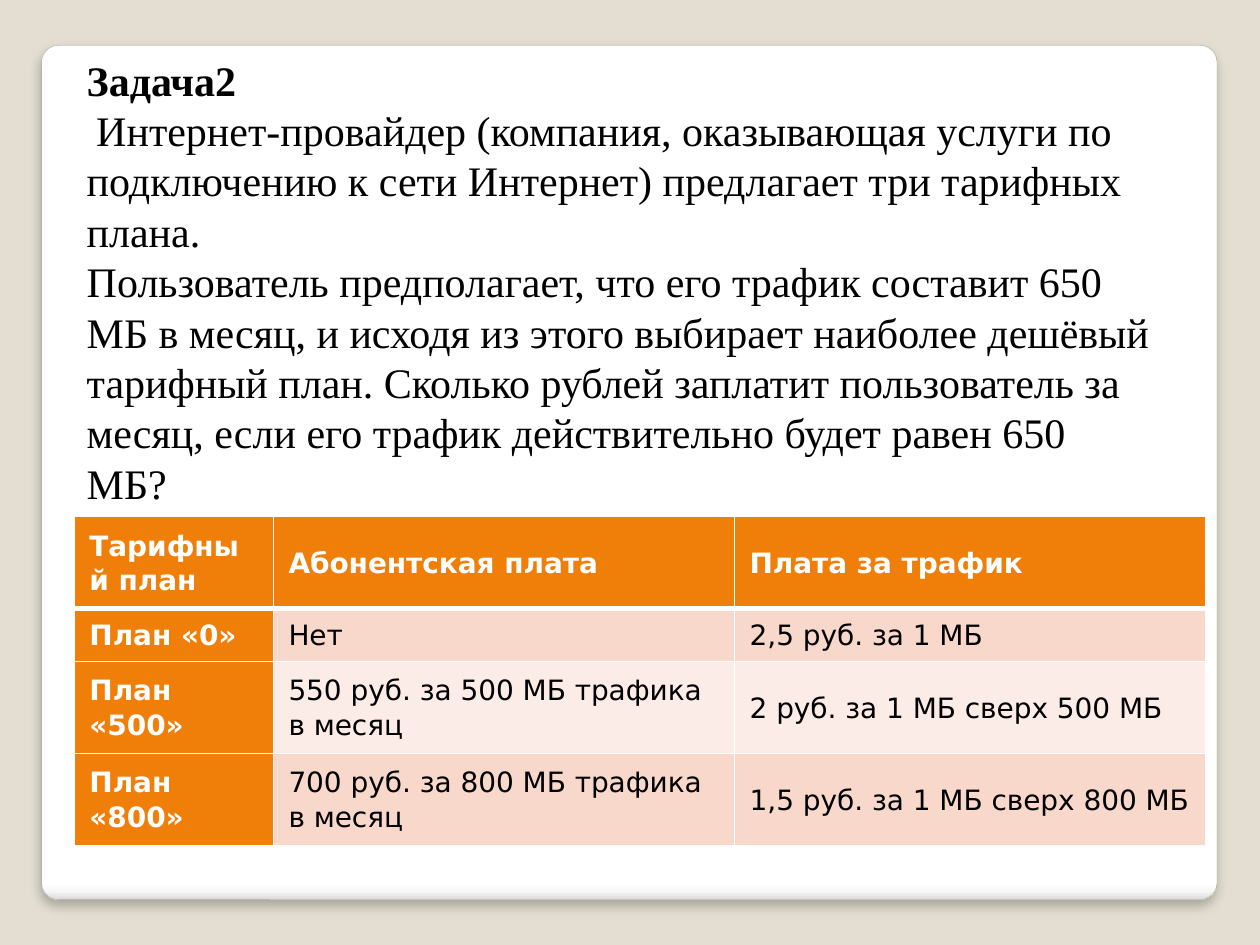
from lxml import etree
from pptx import Presentation
from pptx.dml.color import RGBColor
from pptx.enum.shapes import MSO_SHAPE
from pptx.enum.text import MSO_ANCHOR as ANCHOR, MSO_AUTO_SIZE as AUTO_SIZE
from pptx.oxml import parse_xml
from pptx.oxml.ns import nsdecls, qn
from pptx.util import Inches, Pt

COLORS = {
    "background": "E3DED1",
    "white": "FFFFFF",
    "black": "000000",
    "panel_line": "A4A4A4",
    "accent": "F07F09",
    "band_dark": "F9D8CC",
    "band_light": "FCECE7",
}
PANEL_STOPS = [(0, "FFFFFF"), (98, "FFFFFF"), (99, "F7F7F7"), (100, "DADADA")]
SERIF, SANS, BODY = "Times New Roman", "DejaVu Sans", "Calibri"

# Each paragraph is a list of (text, font, bold) runs
PROBLEM = [
    [("Задача2", SERIF, True)],
    [(" ", BODY, False),
     ("Интернет-провайдер (компания, оказывающая услуги по подключению к сети "
      "Интернет) предлагает три тарифных плана.", SERIF, False)],
    [("Пользователь предполагает, что его трафик составит 650 МБ в месяц, и исходя "
      "из этого выбирает наиболее дешёвый тарифный план. Сколько рублей заплатит "
      "пользователь за месяц, если его трафик действительно будет равен 650 МБ?",
      SERIF, False)],
]
TARIFFS = [
    ["Тарифный план", "Абонентская плата", "Плата за трафик"],
    ["План «0»", "Нет", "2,5 руб. за 1 МБ"],
    ["План «500»", "550 руб. за 500 МБ трафика в месяц",
     "2 руб. за 1 МБ сверх 500 МБ"],
    ["План «800»", "700 руб. за 800 МБ трафика в месяц",
     "1,5 руб. за 1 МБ сверх 800 МБ"],
]
COLUMN_WIDTHS = [1.58, 3.66, 3.74]
ROW_HEIGHTS = [0.73, 0.42, 0.73, 0.73]


def rgb(name):
    return RGBColor.from_string(COLORS[name])


def add_run(paragraph, text, font, size, color, bold):
    run = paragraph.add_run()
    run.text = text
    run.font.name = font
    run.font.size = Pt(size)
    run.font.bold = bold
    run.font.color.rgb = rgb(color)


def add_panel(slide):
    panel = slide.shapes.add_shape(
        MSO_SHAPE.ROUNDED_RECTANGLE,
        Inches(0.33), Inches(0.36), Inches(9.33), Inches(6.78))
    panel.adjustments[0] = 0.02
    panel.line.color.rgb = rgb("panel_line")
    panel.line.width = Pt(0.16)

    # Vertical gradient that darkens at the bottom edge
    panel.fill.gradient()
    panel.fill.gradient_angle = 270
    stops = panel.element.spPr.find(qn("a:gradFill")).find(qn("a:gsLst"))
    for stop in list(stops):
        stops.remove(stop)
    for position, color in PANEL_STOPS:
        stop = etree.SubElement(stops, qn("a:gs"), pos=str(position * 1000))
        etree.SubElement(stop, qn("a:srgbClr"), val=color)

    # Soft shadow below
    panel.shadow.inherit = False
    panel.element.spPr.find(qn("a:effectLst")).append(parse_xml(
        f'<a:outerShdw {nsdecls("a")} blurRad="{Pt(6)}" dist="{Pt(4)}" '
        f'dir="5400000" algn="t" rotWithShape="0"><a:srgbClr val="{COLORS["black"]}">'
        '<a:alpha val="25000"/></a:srgbClr></a:outerShdw>'))


def add_problem(slide):
    box = slide.shapes.add_textbox(
        Inches(0.59), Inches(0.36), Inches(8.66), Inches(3.74))
    frame = box.text_frame
    frame.word_wrap = True
    frame.auto_size = AUTO_SIZE.SHAPE_TO_FIT_TEXT
    frame.vertical_anchor = ANCHOR.MIDDLE
    for index, runs in enumerate(PROBLEM):
        paragraph = frame.add_paragraph() if index else frame.paragraphs[0]
        for text, font, bold in runs:
            add_run(paragraph, text, font, 24, "black", bold)


def set_borders(cell, bottom_width):
    properties = cell._tc.get_or_add_tcPr()
    widths = {"lnL": 1, "lnR": 1, "lnT": 1, "lnB": bottom_width}
    for index, (side, width) in enumerate(widths.items()):
        properties.insert(index, parse_xml(
            f'<a:{side} {nsdecls("a")} w="{Pt(width)}"><a:solidFill>'
            f'<a:srgbClr val="{COLORS["white"]}"/></a:solidFill></a:{side}>'))


def format_cell(cell, text, fill, heading, bottom_width):
    cell.fill.solid()
    cell.fill.fore_color.rgb = rgb(fill)
    cell.vertical_anchor = ANCHOR.MIDDLE
    cell.margin_left = cell.margin_right = Inches(0.12)
    cell.margin_top = cell.margin_bottom = Inches(0.04)
    set_borders(cell, bottom_width)
    paragraph = cell.text_frame.paragraphs[0]
    paragraph.line_spacing = 1.07
    paragraph.space_after = Pt(8)
    add_run(paragraph, text, SANS, 16, "white" if heading else "black", heading)


def add_tariffs(slide):
    tariffs = slide.shapes.add_table(
        len(TARIFFS), len(COLUMN_WIDTHS), Inches(0.59), Inches(4.1),
        Inches(sum(COLUMN_WIDTHS)), Inches(sum(ROW_HEIGHTS))).table
    tariffs.first_col = True
    for column, width in zip(tariffs.columns, COLUMN_WIDTHS):
        column.width = Inches(width)
    for row, height in zip(tariffs.rows, ROW_HEIGHTS):
        row.height = Inches(height)
    for r, texts in enumerate(TARIFFS):
        band = "band_dark" if r % 2 else "band_light"
        for c, text in enumerate(texts):
            heading = r == 0 or c == 0
            format_cell(tariffs.cell(r, c), text, "accent" if heading else band,
                        heading, bottom_width=1 if r else 3)


def main():
    prs = Presentation()
    prs.slide_width, prs.slide_height = Inches(10), Inches(7.5)
    slide = prs.slides.add_slide(prs.slide_layouts[6])
    slide.background.fill.solid()
    slide.background.fill.fore_color.rgb = rgb("background")
    add_panel(slide)
    add_tariffs(slide)
    add_problem(slide)
    prs.save("out.pptx")


if __name__ == "__main__":
    main()
